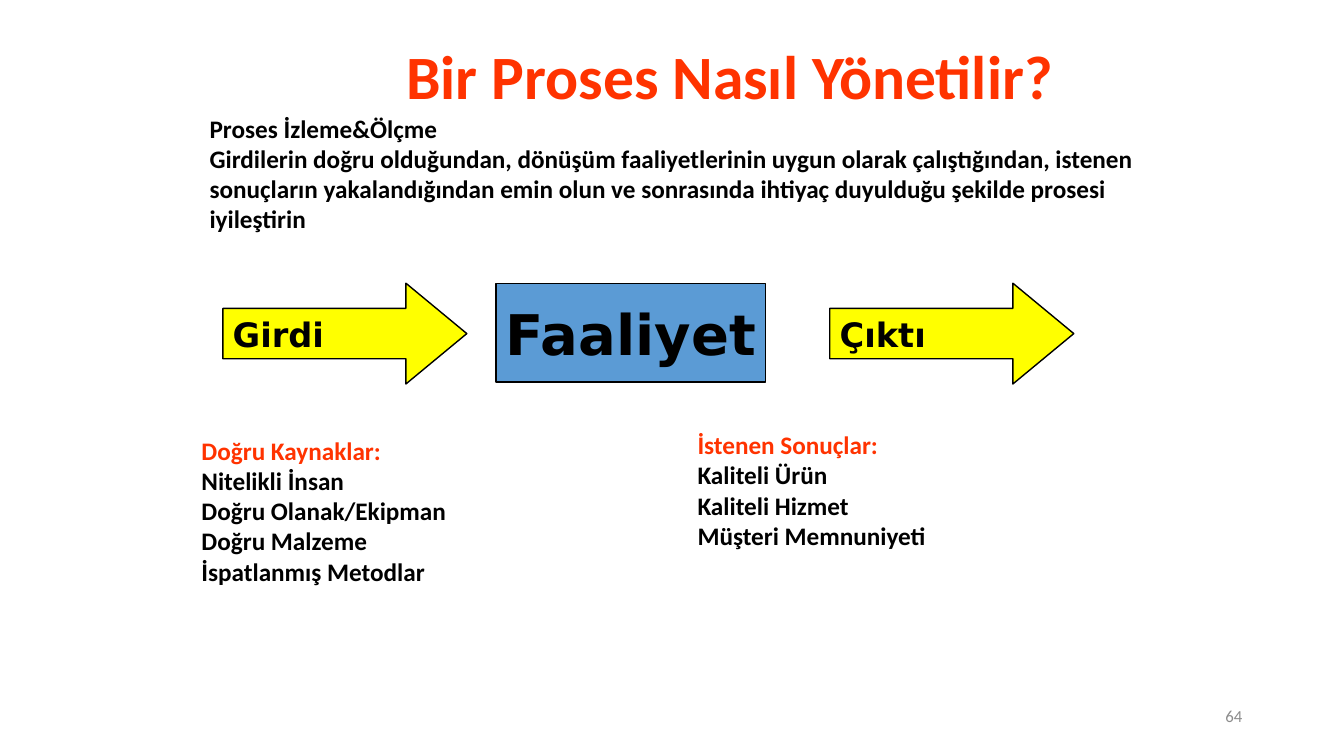
"""Build the slide on how a process is managed."""
import pptx
import pptx.util
import pptx.dml.color
import pptx.enum.shapes
import pptx.enum.text

WIDE, HIGH = 13.33, 7.5
RED, BLACK, GREY, YELLOW, BLUE = "FF3300", "000000", "8C8C8C", "FFFF00", "5B9BD5"
KIND = pptx.enum.shapes.MSO_SHAPE
SIDE = pptx.enum.text.PP_ALIGN
HOLD = pptx.enum.text.MSO_ANCHOR

TITLE = "Bir Proses Nasıl Yönetilir?"
INTRO = [
    "Proses İzleme&Ölçme",
    "Girdilerin doğru olduğundan, dönüşüm faaliyetlerinin uygun olarak çalıştığından, "
    "istenen sonuçların yakalandığından emin olun ve sonrasında ihtiyaç duyulduğu "
    "şekilde prosesi iyileştirin",
]
FLOW = [
    ("Girdi", KIND.RIGHT_ARROW, (2.21, 2.42, 1), YELLOW, 24),
    ("Faaliyet", KIND.RECTANGLE, (4.92, 2.67, 0.98), BLUE, 40),
    ("Çıktı", KIND.RIGHT_ARROW, (8.23, 2.42, 1), YELLOW, 24),
]
LISTS = [
    ((1.9, 4.84, 2.17), ["Doğru Kaynaklar:", "Nitelikli İnsan", "Doğru Olanak/Ekipman",
                         "Doğru Malzeme", "İspatlanmış Metodlar"]),
    ((6.82, 4.6, 1.76), ["İstenen Sonuçlar:", "Kaliteli Ürün", "Kaliteli Hizmet",
                         "Müşteri Memnuniyeti"]),
]
FLOW_TOP, LIST_TOP = 2.81, 3.98


def paint(color, tone):
    """Set a colour from its hex string."""
    color.rgb = pptx.dml.color.RGBColor.from_string(tone)


def write(shape, lines, size, tones, face="Calibri", bold=True, side=SIDE.LEFT,
          hold=HOLD.MIDDLE, wrap=True):
    """Fill a shape with lines; the last tone serves all remaining lines."""
    frame = shape.text_frame
    for name, value in {"word_wrap": wrap, "vertical_anchor": hold}.items():
        setattr(frame, name, value)
    look = {"size": pptx.util.Pt(size), "name": face, "bold": bold}
    for i, line in enumerate(lines):
        para = frame.add_paragraph() if i else frame.paragraphs[0]
        para.alignment = side
        run = para.add_run()
        run.text = line
        for name, value in look.items():
            setattr(run.font, name, value)
        paint(run.font.color, tones[min(i, len(tones) - 1)])


def main():
    """Place all parts and save the deck."""
    deck = pptx.Presentation()
    inch = pptx.util.Inches
    deck.slide_width, deck.slide_height = inch(WIDE), inch(HIGH)
    slide = deck.slides.add_slide(deck.slide_layouts[6])

    def box(*area):
        return slide.shapes.add_textbox(*map(inch, area))

    write(box(3.93, 0.23, 7.48, 1.02), [TITLE], 44, [RED])
    write(box(1.98, 1.07, 9.45, 1.31), INTRO, 18, [BLACK], hold=HOLD.TOP)

    for label, kind, (left, width, height), tone, size in FLOW:
        shape = slide.shapes.add_shape(kind, *map(inch, (left, FLOW_TOP, width, height)))
        shape.shadow.inherit = False
        shape.fill.solid()
        paint(shape.fill.fore_color, tone)
        paint(shape.line.color, BLACK)
        shape.line.width = pptx.util.Pt(1)
        if kind == KIND.RIGHT_ARROW:
            shape.adjustments[1] = 0.604
        write(shape, [label], size, [BLACK], face="DejaVu Sans", wrap=False)

    for (left, width, height), lines in LISTS:
        write(box(left, LIST_TOP, width, height), lines, 18, [RED, BLACK])

    write(box(9.42, 6.95, 3, 0.4), ["64"], 12, [GREY], bold=False, side=SIDE.RIGHT,
          hold=HOLD.TOP)
    deck.save("out.pptx")


if __name__ == "__main__":
    main()
